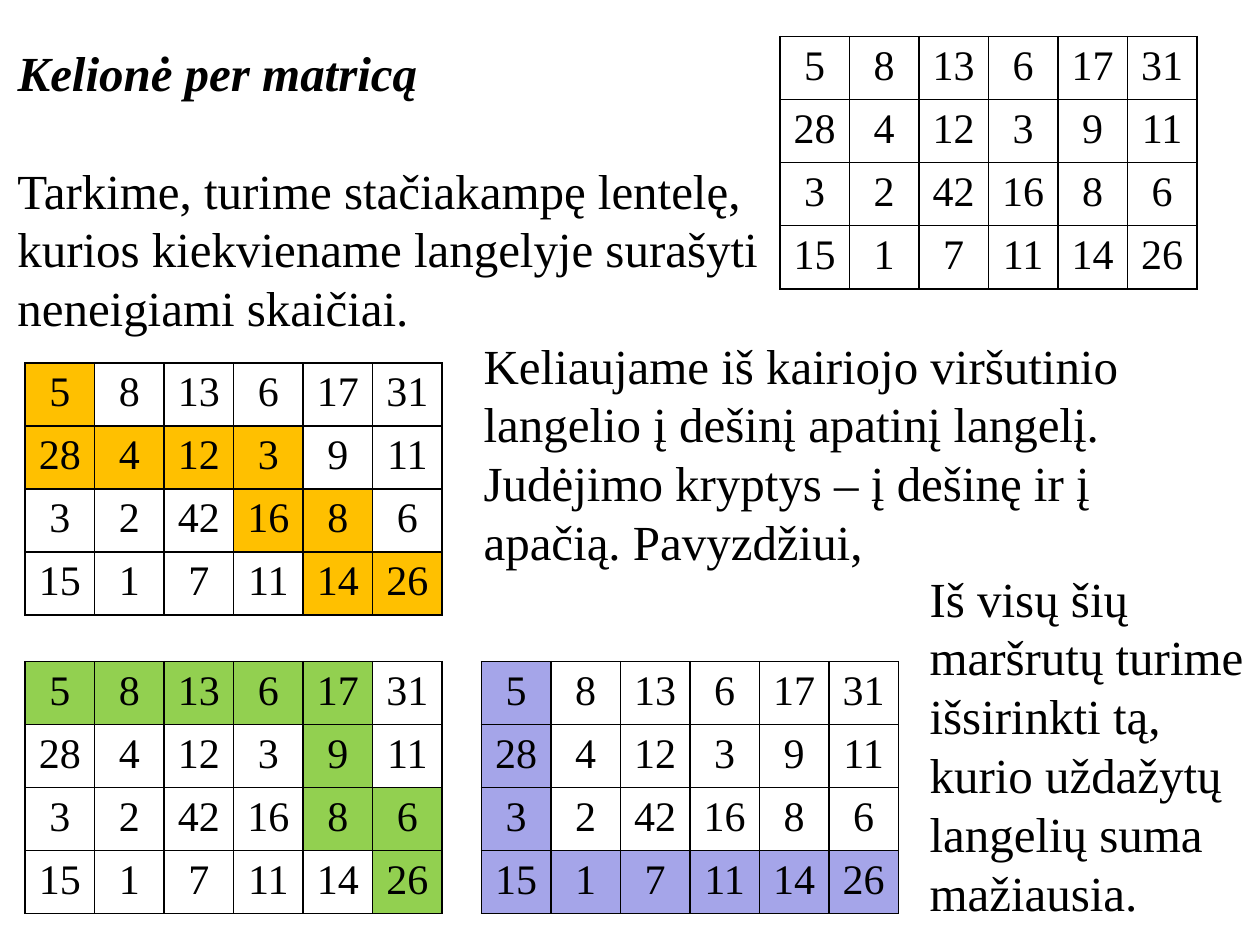
from lxml import etree
from pptx import Presentation
from pptx import util as u
from pptx.dml.color import RGBColor
from pptx.enum import text as t
from pptx.oxml import ns

BLACK = RGBColor(0x00, 0x00, 0x00)
WHITE = RGBColor(0xFF, 0xFF, 0xFF)
GOLD = RGBColor(0xFF, 0xC0, 0x00)
GREEN = RGBColor(0x92, 0xD0, 0x50)
LILAC = RGBColor(0xA5, 0xA5, 0xE9)

MATRIX = [
    [5, 8, 13, 6, 17, 31],
    [28, 4, 12, 3, 9, 11],
    [3, 2, 42, 16, 8, 6],
    [15, 1, 7, 11, 14, 26],
]


def write(frame, words, size=28, bold=False, slant=False, align=t.PP_ALIGN.LEFT):
    par = frame.paragraphs[0]
    par.alignment = align
    run = par.add_run()
    run.text = words
    font = run.font
    font.name, font.size = "Times New Roman", u.Pt(size)
    font.bold, font.italic = bold, slant
    font.color.rgb = BLACK


def trace(moves):
    """Return the cells passed from the top left; D is down, R is right."""
    row = col = 0
    cells = {(row, col)}
    for move in moves:
        row += move == "D"
        col += move == "R"
        cells.add((row, col))
    return cells


def border(cell, width=1):
    props = cell._tc.get_or_add_tcPr()
    for side in ("lnL", "lnR", "lnT", "lnB"):
        line = etree.SubElement(props, ns.qn("a:" + side), w=str(u.Pt(width)))
        fill = etree.SubElement(line, ns.qn("a:solidFill"))
        etree.SubElement(fill, ns.qn("a:srgbClr"), val=str(BLACK))


class Page:
    col = 39.72
    row = 36

    def __init__(self, deck):
        self.slide = deck.slides.add_slide(deck.slide_layouts[5])

    def title(self, words, left, top, width, height):
        shape = self.slide.shapes.title
        shape.left, shape.top = u.Pt(left), u.Pt(top)
        shape.width, shape.height = u.Pt(width), u.Pt(height)
        frame = shape.text_frame
        frame.vertical_anchor = t.MSO_ANCHOR.TOP
        frame.auto_size = t.MSO_AUTO_SIZE.NONE
        write(frame, words, bold=True, slant=True)

    def text(self, words, left, top, width, height):
        box = self.slide.shapes.add_textbox(
            u.Pt(left), u.Pt(top), u.Pt(width), u.Pt(height))
        frame = box.text_frame
        frame.word_wrap = True
        frame.auto_size = t.MSO_AUTO_SIZE.SHAPE_TO_FIT_TEXT
        write(frame, words)

    def grid(self, left, top, moves=None, color=WHITE):
        """Draw the matrix and paint the cells of one route."""
        rows, cols = len(MATRIX), len(MATRIX[0])
        table = self.slide.shapes.add_table(
            rows, cols, u.Pt(left), u.Pt(top),
            u.Pt(cols * self.col), u.Pt(rows * self.row)).table
        for col in table.columns:
            col.width = u.Pt(self.col)
        route = trace(moves) if moves else set()
        for r, line in enumerate(MATRIX):
            table.rows[r].height = u.Pt(self.row)
            for c, value in enumerate(line):
                cell = table.cell(r, c)
                border(cell)
                cell.fill.solid()
                cell.fill.fore_color.rgb = color if (r, c) in route else WHITE
                write(cell.text_frame, str(value), size=24,
                      align=t.PP_ALIGN.CENTER)


def main():
    deck = Presentation()
    deck.slide_width, deck.slide_height = u.Pt(720), u.Pt(540)
    page = Page(deck)
    page.title("Kelionė per matricą", 2.88, 20.88, 443.5, 41)
    page.text("Tarkime, turime stačiakampę lentelę, kurios kiekviename "
              "langelyje surašyti neneigiami skaičiai.", 2.88, 88, 443.5, 108)
    page.grid(445.68, 20.88)
    page.text("Keliaujame iš kairiojo viršutinio langelio į dešinį apatinį "
              "langelį. Judėjimo kryptys – į dešinę ir į apačią. Pavyzdžiui,",
              269.28, 187.92, 396.72, 143.28)
    page.grid(14.4, 207.36, "DRRRDRDR", GOLD)
    page.grid(14.4, 378, "RRRRDDRD", GREEN)
    page.grid(275.04, 378, "DDDRRRRR", LILAC)
    page.text("Iš visų šių maršrutų turime išsirinkti tą, kurio uždažytų "
              "langelių suma mažiausia.", 524.16, 321.12, 198.72, 210.96)
    deck.save("out.pptx")


if __name__ == "__main__":
    main()
